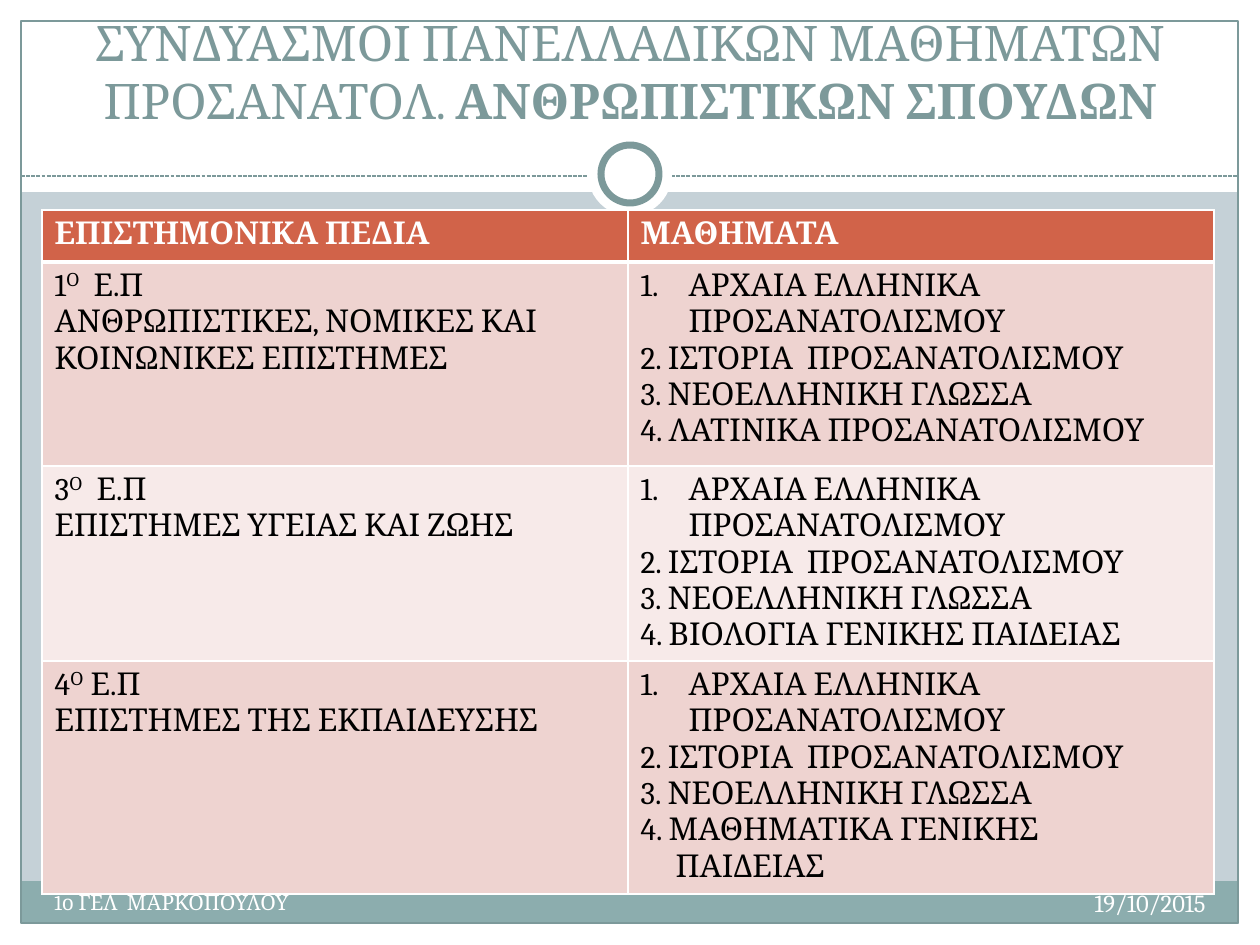
"""Build a slide listing exam subjects for each scientific field of humanities studies."""
from typing import NamedTuple, Optional

from lxml.etree import SubElement
from pptx import Presentation
from pptx.dml.color import RGBColor
from pptx.enum.dml import MSO_LINE
from pptx.enum.shapes import MSO_CONNECTOR, MSO_SHAPE
from pptx.enum.text import MSO_ANCHOR, PP_ALIGN
from pptx.oxml.ns import qn
from pptx.util import Pt

EMU_PER_PX = 914400 / 126
FONT = "Cambria"
WHITE = RGBColor(0xFF, 0xFF, 0xFF)
BLACK = RGBColor(0, 0, 0)
BACKDROP = RGBColor(0xC5, 0xD1, 0xD7)
TEAL = RGBColor(0x7C, 0x99, 0x9A)
FOOTER = RGBColor(0x8C, 0xAD, 0xAE)
HEADER = RGBColor(0xD1, 0x63, 0x49)
BANDS = (RGBColor(0xEE, 0xD3, 0xD0), RGBColor(0xF7, 0xEA, 0xE9))


class Panel(NamedTuple):
    kind: MSO_SHAPE
    box: tuple[int, int, int, int]
    fill: Optional[RGBColor] = WHITE
    line_pt: float = 0


class Run(NamedTuple):
    text: str
    bold: bool = False
    raised: bool = False


class Para(NamedTuple):
    runs: list[Run]
    margin: int = 0
    numbered: bool = False


class Label(NamedTuple):
    box: tuple[int, int, int, int]
    runs: list[Run]
    size: int
    color: RGBColor
    align: PP_ALIGN
    anchor: MSO_ANCHOR = MSO_ANCHOR.TOP


class Field(NamedTuple):
    number: str
    suffix: str
    name: str
    last_subject: list[Para]
    height: int


BACK_PANELS = [
    Panel(MSO_SHAPE.RECTANGLE, (0, 924, 1260, 21)),
    Panel(MSO_SHAPE.RECTANGLE, (0, 0, 1260, 192)),
    Panel(MSO_SHAPE.RECTANGLE, (0, 0, 21, 945)),
    Panel(MSO_SHAPE.RECTANGLE, (1239, 0, 21, 945)),
    Panel(MSO_SHAPE.RECTANGLE, (21, 881, 1217, 43), FOOTER),
    Panel(MSO_SHAPE.RECTANGLE, (21, 21, 1217, 902), None, 0.75),
]
RINGS = [
    Panel(MSO_SHAPE.OVAL, (588, 132, 84, 84)),
    Panel(MSO_SHAPE.OVAL, (601, 145, 58, 58), WHITE, 4),
]
LABELS = [
    Label((42, 32, 1176, 104),
          [Run("ΣΥΝΔΥΑΣΜΟΙ ΠΑΝΕΛΛΑΔΙΚΩΝ ΜΑΘΗΜΑΤΩΝ ΠΡΟΣΑΝΑΤΟΛ. "),
           Run("ΑΝΘΡΩΠΙΣΤΙΚΩΝ ΣΠΟΥΔΩΝ", bold=True)],
          28, TEAL, PP_ALIGN.CENTER, MSO_ANCHOR.BOTTOM),
    Label((798, 882, 420, 50), [Run("19/10/2015")], 14, WHITE, PP_ALIGN.RIGHT),
    Label((42, 883, 494, 50), [Run("1ο ΓΕΛ  ΜΑΡΚΟΠΟΥΛΟΥ")], 12, WHITE, PP_ALIGN.LEFT),
]
HEADINGS = ("ΕΠΙΣΤΗΜΟΝΙΚΑ ΠΕΔΙΑ", "ΜΑΘΗΜΑΤΑ")
HEADING_HEIGHT = 52
COMMON_SUBJECTS = [
    Para([Run("ΑΡΧΑΙΑ ΕΛΛΗΝΙΚΑ")], 48, True),
    Para([Run("ΠΡΟΣΑΝΑΤΟΛΙΣΜΟΥ")], 48),
    Para([Run("2. ΙΣΤΟΡΙΑ  ΠΡΟΣΑΝΑΤΟΛΙΣΜΟΥ")]),
    Para([Run("3. ΝΕΟΕΛΛΗΝΙΚΗ ΓΛΩΣΣΑ")]),
]
FIELDS = [
    Field("1", "  Ε.Π", "ΑΝΘΡΩΠΙΣΤΙΚΕΣ, ΝΟΜΙΚΕΣ ΚΑΙ ΚΟΙΝΩΝΙΚΕΣ ΕΠΙΣΤΗΜΕΣ",
          [Para([Run("4. ΛΑΤΙΝΙΚΑ ΠΡΟΣΑΝΑΤΟΛΙΣΜΟΥ")])], 204),
    Field("3", "  Ε.Π", "ΕΠΙΣΤΗΜΕΣ ΥΓΕΙΑΣ ΚΑΙ ΖΩΗΣ",
          [Para([Run("4. ΒΙΟΛΟΓΙΑ ΓΕΝΙΚΗΣ ΠΑΙΔΕΙΑΣ")])], 194),
    Field("4", " Ε.Π", "ΕΠΙΣΤΗΜΕΣ ΤΗΣ ΕΚΠΑΙΔΕΥΣΗΣ",
          [Para([Run("4. ΜΑΘΗΜΑΤΙΚΑ ΓΕΝΙΚΗΣ")]), Para([Run("ΠΑΙΔΕΙΑΣ")], 35)], 230),
]


def px(n: int) -> int:
    return round(n * EMU_PER_PX)


def add_panel(s, panel: Panel) -> None:
    sp = s.shapes.add_shape(panel.kind, *map(px, panel.box))
    sp.shadow.inherit = False
    if panel.fill is None:
        sp.fill.background()
    else:
        sp.fill.solid()
        sp.fill.fore_color.rgb = panel.fill
    if panel.line_pt:
        sp.line.color.rgb = TEAL
        sp.line.width = Pt(panel.line_pt)
    else:
        sp.line.fill.background()


def add_divider(s) -> None:
    cxn = s.shapes.add_connector(MSO_CONNECTOR.STRAIGHT, px(21), px(176), px(1239), px(176))
    cxn.line.color.rgb = TEAL
    cxn.line.width = Pt(0.75)
    cxn.line.dash_style = MSO_LINE.SQUARE_DOT
    SubElement(cxn._element.spPr, qn("a:effectLst"))


def write_runs(p, runs: list[Run], size: int, color: RGBColor) -> None:
    for run in runs:
        r = p.add_run()
        r.text = run.text
        for name, value in {"name": FONT, "size": Pt(size), "bold": run.bold}.items():
            setattr(r.font, name, value)
        r.font.color.rgb = color
        if run.raised:
            r._r.get_or_add_rPr().set("baseline", "30000")


def add_label(s, label: Label) -> None:
    tf = s.shapes.add_textbox(*map(px, label.box)).text_frame
    for name, value in {"word_wrap": True, "vertical_anchor": label.anchor}.items():
        setattr(tf, name, value)
    p = tf.paragraphs[0]
    p.alignment = label.align
    write_runs(p, label.runs, label.size, label.color)


def fill_cell(cell, paras: list[Para], fill: RGBColor, color: RGBColor,
              top_pt: int = 1, bottom_pt: int = 1) -> None:
    tcPr = cell._tc.get_or_add_tcPr()
    for side, width in {"L": 1, "R": 1, "T": top_pt, "B": bottom_pt}.items():
        ln = SubElement(tcPr, qn(f"a:ln{side}"), w=str(Pt(width)))
        SubElement(SubElement(ln, qn("a:solidFill")), qn("a:srgbClr"), val=str(WHITE))
    cell.fill.solid()
    cell.fill.fore_color.rgb = fill
    for name, value in {"margin_top": px(6), "margin_bottom": 0}.items():
        setattr(cell, name, value)
    tf = cell.text_frame
    for i, para in enumerate(paras):
        p = tf.add_paragraph() if i else tf.paragraphs[0]
        pPr = p._p.get_or_add_pPr()
        if para.margin:
            pPr.set("marL", str(px(para.margin)))
        if para.numbered:
            pPr.set("indent", str(-px(para.margin)))
            SubElement(pPr, qn("a:buAutoNum"), type="arabicPeriod")
        write_runs(p, para.runs, 18, color)


def add_subject_table(s) -> None:
    heights = [HEADING_HEIGHT, *(field.height for field in FIELDS)]
    box = (42, 210, 1172, sum(heights))
    table = s.shapes.add_table(len(heights), len(HEADINGS), *map(px, box)).table
    for row, height in zip(table.rows, heights):
        row.height = px(height)
    for col, heading in enumerate(HEADINGS):
        fill_cell(table.cell(0, col), [Para([Run(heading, bold=True)])], HEADER, WHITE, bottom_pt=3)
    for i, field in enumerate(FIELDS):
        title = Para([Run(field.number), Run("Ο", raised=True), Run(field.suffix)])
        columns = ([title, Para([Run(field.name)])], COMMON_SUBJECTS + field.last_subject)
        for col, paras in enumerate(columns):
            fill_cell(table.cell(i + 1, col), paras, BANDS[i % 2], BLACK, top_pt=1 if i else 3)


def main() -> None:
    prs = Presentation()
    prs.slide_width, prs.slide_height = px(1260), px(945)
    s = prs.slides.add_slide(prs.slide_layouts[6])
    s.background.fill.solid()
    s.background.fill.fore_color.rgb = BACKDROP
    for panel in BACK_PANELS:
        add_panel(s, panel)
    add_divider(s)
    for ring in RINGS:
        add_panel(s, ring)
    title, *footers = LABELS
    add_label(s, title)
    add_subject_table(s)
    for footer in footers:
        add_label(s, footer)
    prs.save("out.pptx")


if __name__ == "__main__":
    main()
